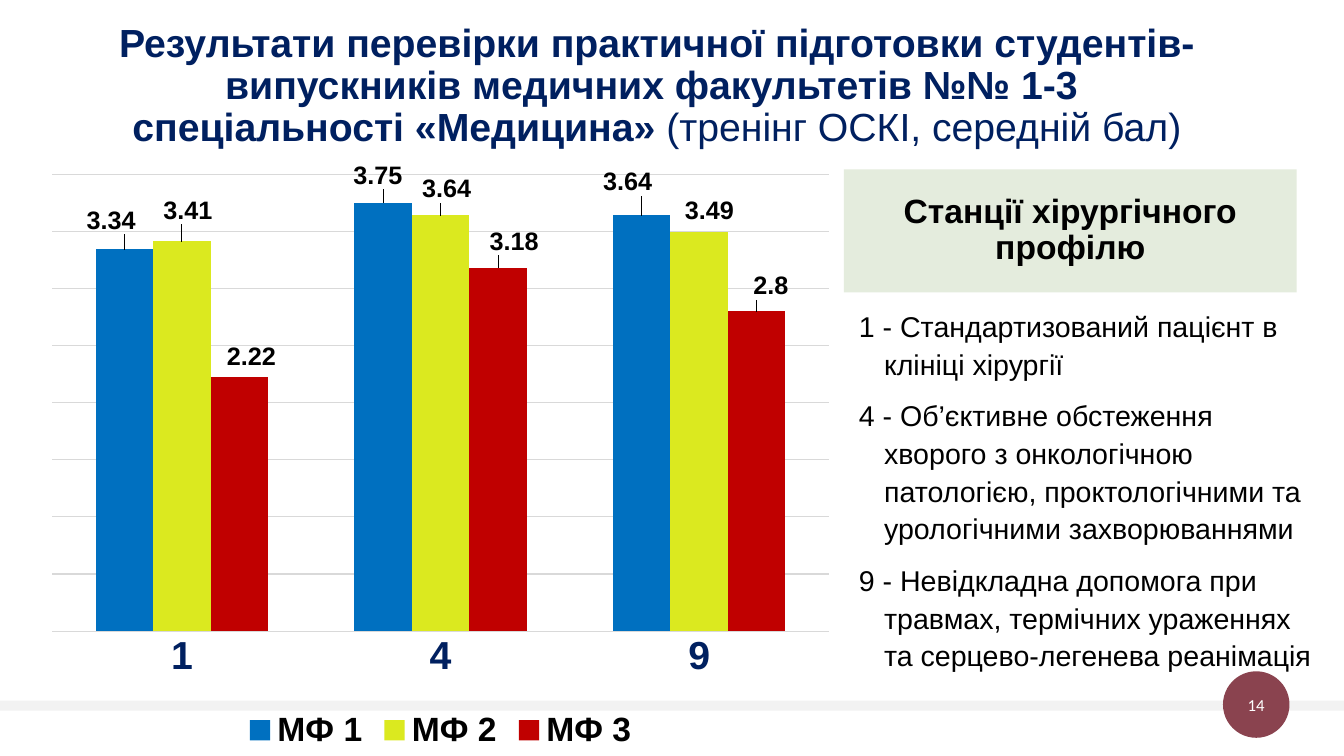
from lxml import etree
from pptx import Presentation
from pptx import util as u
from pptx.chart.data import CategoryChartData
from pptx.dml.color import RGBColor
from pptx.enum import chart as ch, shapes, text
from pptx.oxml.ns import qn

STATIONS = ["1", "4", "9"]
FACULTIES = [
    ("МФ 1", "0070C0", [3.34, 3.75, 3.64], [(-0.13, -0.11), (-0.05, -0.09), (-0.14, -0.15)]),
    ("МФ 2", "DBE91F", [3.41, 3.64, 3.49], [(0.06, -0.13), (0.06, -0.08), (0.1, -0.04)]),
    ("МФ 3", "C00000", [2.22, 3.18, 2.8], [(0.12, -0.03), (0.16, -0.08), (0.14, -0.07)]),
]
DESCRIPTIONS = [
    "1 - Стандартизований пацієнт в клініці хірургії",
    "4 - Об’єктивне обстеження хворого з онкологічною патологією, проктологічними та урологічними захворюваннями",
    "9 - Невідкладна допомога при травмах, термічних ураженнях та серцево-легенева реанімація",
]


def rgb(color):
    return RGBColor.from_string(color)


def inches(*lengths):
    return [u.Inches(length) for length in lengths]


def style(font, size, color="000000", bold=False, name="Arial"):
    font.size, font.bold, font.name = u.Pt(size), bold, name
    font.color.rgb = rgb(color)


def add_block(slide, preset, box, color):
    block = slide.shapes.add_shape(preset, *inches(*box))
    block.shadow.inherit = False
    block.fill.solid()
    block.fill.fore_color.rgb = rgb(color)
    block.line.fill.background()
    return block


def add_layout(parent, position, **values):
    layout = etree.Element(qn("c:layout"))
    manual = etree.SubElement(layout, qn("c:manualLayout"))
    for tag, value in values.items():
        etree.SubElement(manual, qn("c:" + tag)).set("val", str(value))
    parent.insert(position, layout)


def add_heading(slide, box):
    heading = slide.shapes.title
    heading.left, heading.top, heading.width, heading.height = inches(*box)
    frame = heading.text_frame
    frame.margin_left = 0
    frame.auto_size = text.MSO_AUTO_SIZE.NONE
    frame.vertical_anchor = text.MSO_ANCHOR.TOP
    line = frame.paragraphs[0]
    line.alignment = text.PP_ALIGN.CENTER
    line.line_spacing = 0.9
    style(line.font, 28, "002060")
    subject = "Результати перевірки практичної підготовки студентів-випускників медичних факультетів №№ 1-3 "
    for index, part in enumerate([subject, "спеціальності «Медицина» "]):
        if index:
            line.add_line_break()
        run = line.add_run()
        run.text = part
        style(run.font, 28, "002060", True)
    measure = line.add_run()
    measure.text = "(тренінг ОСКІ, середній бал)"
    style(measure.font, 28, "002060")


def add_scores(slide, box):
    data = CategoryChartData()
    data.categories = STATIONS
    for faculty, _, scores, _ in FACULTIES:
        data.add_series(faculty, scores)
    scores_chart = slide.shapes.add_chart(
        ch.XL_CHART_TYPE.COLUMN_CLUSTERED, *inches(*box), data).chart
    style(scores_chart.font, 10, name="Calibri")
    scores_chart.has_title = False
    scores_chart.has_legend = True
    legend = scores_chart.legend
    legend.position = ch.XL_LEGEND_POSITION.BOTTOM
    legend.include_in_layout = False
    style(legend.font, 24, bold=True)

    stations = scores_chart.category_axis
    stations.major_tick_mark = ch.XL_TICK_MARK.NONE
    style(stations.tick_labels.font, 28, "002060", True)
    scale = scores_chart.value_axis
    scale.visible = False
    scale.minimum_scale, scale.maximum_scale, scale.major_unit = 0, 4, 0.5
    scale.has_major_gridlines = True
    for line in (stations.format.line, scale.major_gridlines.format.line):
        line.color.rgb = rgb("D9D9D9")
        line.width = u.Pt(0.75)

    plot = scores_chart.plots[0]
    plot.gap_width, plot.overlap = 150, 0
    plot.vary_by_categories = False
    for series, (_, color, _, shifts) in zip(plot.series, FACULTIES):
        series.format.fill.solid()
        series.format.fill.fore_color.rgb = rgb(color)
        for index, (right, down) in enumerate(shifts):
            label = series.points[index].data_label
            style(label.font, 18, bold=True)
            label.position = ch.XL_LABEL_POSITION.OUTSIDE_END
        labels = series.data_labels
        labels.show_value = True
        style(labels.font, 18, bold=True)
        for entry, (right, down) in zip(series._element.iter(qn("c:dLbl")), shifts):
            add_layout(entry, 1, x=right / box[2], y=down / box[3])

    area = scores_chart._chartSpace.find(".//" + qn("c:plotArea"))
    for automatic in area.findall(qn("c:layout")):
        area.remove(automatic)
    add_layout(area, 0, layoutTarget="inner", xMode="edge", yMode="edge",
               x=0.02, y=0.02, w=0.96, h=0.77)


def add_profile(slide, box):
    left, top, width, height = box
    banner = add_block(slide, shapes.MSO_SHAPE.RECTANGLE, (left, top, width, 1.22), "E4ECDD")
    banner.text_frame.word_wrap = True
    caption = banner.text_frame.paragraphs[0]
    caption.text = "Станції хірургічного профілю"
    caption.alignment = text.PP_ALIGN.CENTER
    caption.line_spacing, caption.space_before = 0.9, u.Pt(10)
    style(caption.font, 24, bold=True)

    details = slide.shapes.add_textbox(
        *inches(left + 0.05, top + 1.3, width + 0.23, height - 1.3)).text_frame
    details.word_wrap = True
    for index, description in enumerate(DESCRIPTIONS):
        item = details.add_paragraph() if index else details.paragraphs[0]
        item.text = description
        item.line_spacing, item.space_before = 1.1, u.Pt(10)
        style(item.font, 20.4)
        indents = item._p.get_or_add_pPr()
        indents.set("marL", str(u.Inches(0.25)))
        indents.set("indent", str(u.Inches(-0.25)))


def add_footer(slide, box):
    left, top, width, height = box
    add_block(slide, shapes.MSO_SHAPE.RECTANGLE, (left, top + 0.29, width, 0.1), "F2F2F2")
    badge = add_block(slide, shapes.MSO_SHAPE.OVAL,
                      (left + width - 1.2, top, height, height), "8A434F")
    frame = badge.text_frame
    frame.margin_left = frame.margin_right = frame.margin_top = frame.margin_bottom = 0
    number = frame.paragraphs[0]
    number.text = "14"
    number.alignment = text.PP_ALIGN.CENTER
    style(number.font, 12, "FFFFFF", name="Calibri")


def main():
    deck = Presentation()
    deck.slide_width, deck.slide_height = inches(13.33, 7.5)
    slide = deck.slides.add_slide(deck.slide_layouts[5])
    add_footer(slide, (0, 6.66, 13.33, 0.66))
    add_heading(slide, (0.51, 0.18, 12.11, 1.42))
    add_profile(slide, (8.37, 1.68, 4.49, 5.41))
    add_scores(slide, (0.36, 1.6, 8.02, 5.9))
    deck.save("out.pptx")


if __name__ == "__main__":
    main()
